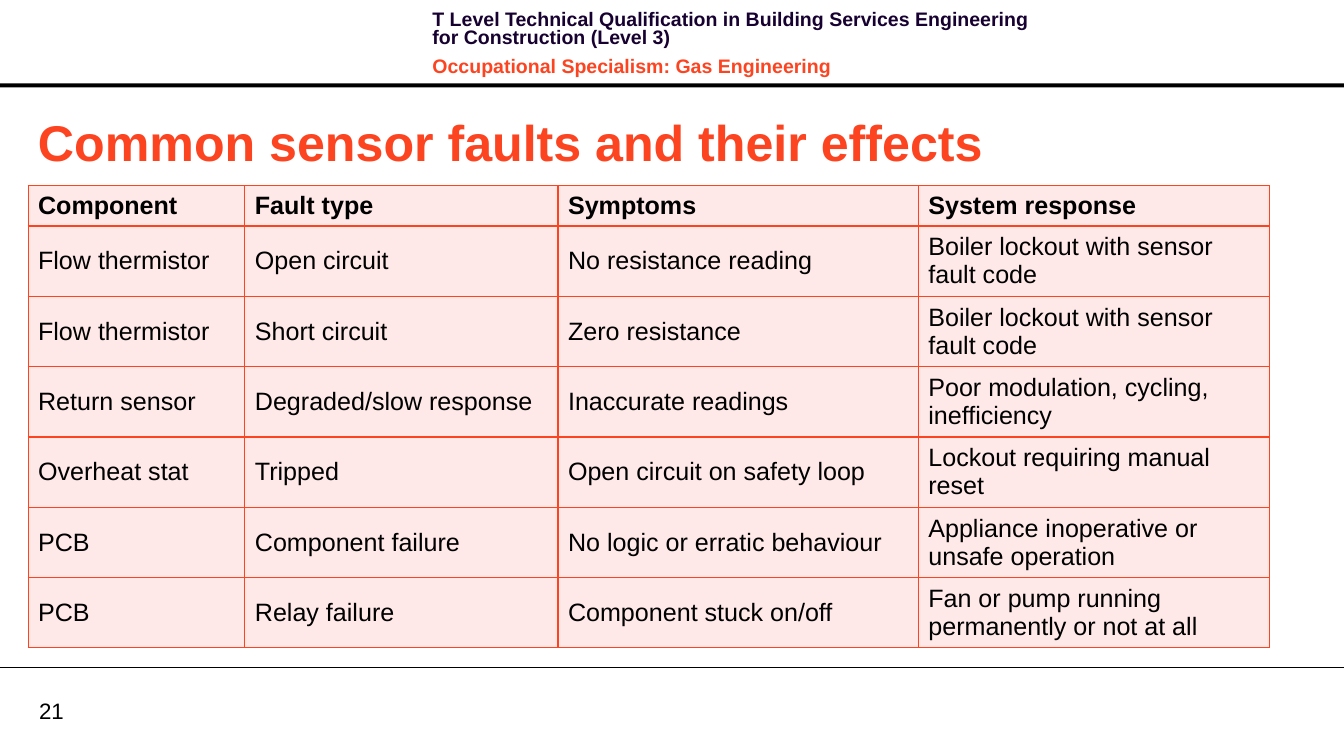
"""Build the slide on common sensor faults and their effects."""
from lxml.etree import SubElement
from pptx import Presentation
from pptx.dml.color import RGBColor
from pptx.enum.shapes import MSO_CONNECTOR, MSO_SHAPE
from pptx.enum.text import MSO_ANCHOR
from pptx.oxml import parse_xml
from pptx.oxml.ns import nsdecls, qn
from pptx.util import Inches, Pt

BLACK, NAVY, ORANGE, PINK = "000000", "170130", "FC4421", "FEE9E8"


def color(code):
    return RGBColor.from_string(code)


def write(frame, text, size=18, fill=BLACK, bold=False, first=True, line=None, gap=None):
    para = frame.paragraphs[0] if first else frame.add_paragraph()
    run = para.add_run()
    run.text = text
    run.font.name = "Arial"
    run.font.size = Pt(size)
    run.font.bold = bold
    run.font.color.rgb = color(fill)
    if line:
        para.line_spacing = Pt(line)
    if gap:
        para.space_after = Pt(gap)
        if not first:
            para.space_before = Pt(gap)


deck = Presentation()
deck.slide_width = Inches(13.39)
deck.slide_height = Inches(7.48)
slide = deck.slides.add_slide(deck.slide_layouts[6])
shapes = slide.shapes

bar = shapes.add_shape(MSO_SHAPE.RECTANGLE, 0, Inches(0.83), deck.slide_width, Inches(0.04))
bar.shadow.inherit = False
bar.fill.solid()
bar.fill.fore_color.rgb = color(BLACK)
bar.line.fill.background()

rule = shapes.add_connector(MSO_CONNECTOR.STRAIGHT, 0, Inches(6.65), deck.slide_width, Inches(6.65))
rule.line.color.rgb = color(BLACK)
rule.line.width = Pt(0.75)
SubElement(rule._element.spPr, qn("a:effectLst"))

number = shapes.add_textbox(Inches(0.39), Inches(6.94), Inches(0.64), Inches(0.27)).text_frame
number.margin_left = number.margin_right = number.margin_top = number.margin_bottom = 0
number.vertical_anchor = MSO_ANCHOR.MIDDLE
number.word_wrap = True
write(number, "21", size=16)

header = shapes.add_textbox(Inches(4.21), Inches(0.07), Inches(6.37), Inches(0.64)).text_frame
header.word_wrap = True
write(header, "T Level Technical Qualification in Building Services Engineering for Construction (Level 3)",
      size=14, fill=NAVY, bold=True, line=13.1, gap=4)
write(header, "Occupational Specialism: Gas Engineering",
      size=14, fill=ORANGE, bold=True, first=False, line=13.1, gap=4)

title = shapes.add_textbox(Inches(0.28), Inches(1.05), Inches(12.72), Inches(0.71)).text_frame
title.vertical_anchor = MSO_ANCHOR.MIDDLE
title.word_wrap = True
write(title, "Common sensor faults and their effects", size=36, fill=ORANGE, bold=True)

faults = [
    ("Component", "Fault type", "Symptoms", "System response"),
    ("Flow thermistor", "Open circuit", "No resistance reading", "Boiler lockout with sensor fault code"),
    ("Flow thermistor", "Short circuit", "Zero resistance", "Boiler lockout with sensor fault code"),
    ("Return sensor", "Degraded/slow response", "Inaccurate readings", "Poor modulation, cycling, inefficiency"),
    ("Overheat stat", "Tripped", "Open circuit on safety loop", "Lockout requiring manual reset"),
    ("PCB", "Component failure", "No logic or erratic behaviour", "Appliance inoperative or unsafe operation"),
    ("PCB", "Relay failure", "Component stuck on/off", "Fan or pump running permanently or not at all"),
]
table = shapes.add_table(len(faults), 4, Inches(0.28), Inches(1.85), Inches(12.37), Inches(4.53)).table
table.horz_banding = False
for column, width in zip(table.columns, (2.16, 3.12, 3.59, 3.5)):
    column.width = Inches(width)
for r, fault in enumerate(faults):
    table.rows[r].height = Inches(0.69 if r else 0.39)
    for c, text in enumerate(fault):
        cell = table.cell(r, c)
        cell.vertical_anchor = MSO_ANCHOR.MIDDLE
        cell.fill.solid()
        cell.fill.fore_color.rgb = color(PINK)
        write(cell.text_frame, text, bold=r == 0)
        props = cell._tc.get_or_add_tcPr()
        for i, side in enumerate("LRTB"):
            props.insert(i, parse_xml(
                f'<a:ln{side} {nsdecls("a")} w="12700"><a:solidFill>'
                f'<a:srgbClr val="{ORANGE}"/></a:solidFill></a:ln{side}>'))

deck.save("out.pptx")
